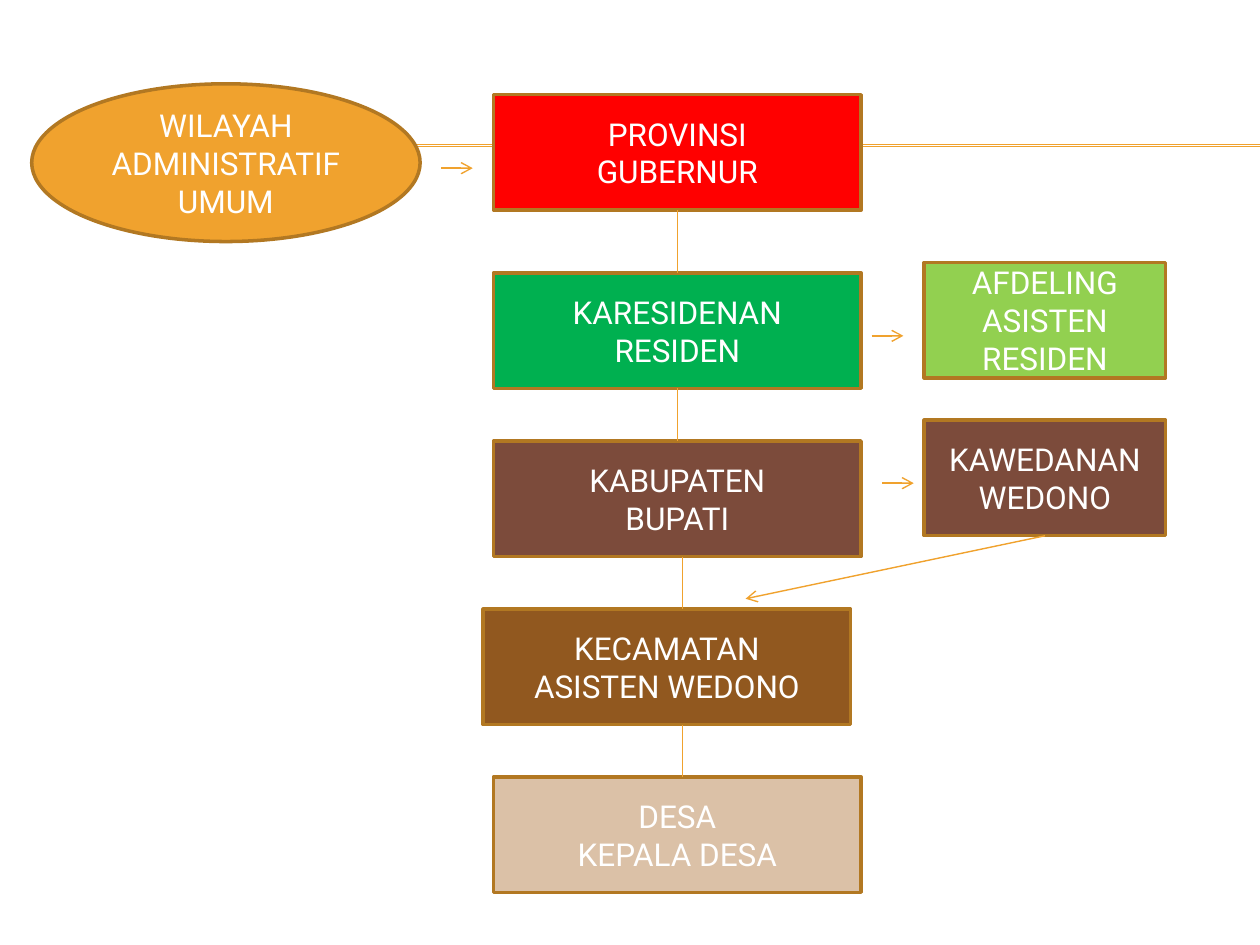
from pptx import Presentation
from pptx.dml.color import RGBColor
from pptx.enum.shapes import MSO_CONNECTOR, MSO_SHAPE
from pptx.enum.text import MSO_ANCHOR, PP_ALIGN
from pptx.oxml.ns import qn
from pptx.util import Cm, Pt
from lxml.etree import SubElement

WHITE = RGBColor(0xFF, 0xFF, 0xFF)
ORANGE = RGBColor(0xF0, 0xA2, 0x2E)
EDGE = RGBColor(0xB2, 0x78, 0x22)
RED = RGBColor(0xFF, 0x00, 0x00)
GREEN = RGBColor(0x00, 0xB0, 0x50)
LIME = RGBColor(0x92, 0xD0, 0x50)
BROWN = RGBColor(0x7C, 0x4B, 0x3B)
OCHRE = RGBColor(0x91, 0x58, 0x1F)
SAND = RGBColor(0xDB, 0xC1, 0xA7)

BOX_H = 2.33
MAIN_W, SIDE_W = 7.41, 4.87
MAIN_X, SIDE_X = 9.95, 18.63
STEM_X = 13.76


def add_node(slide, kind, text, fill, x, y, w, h=BOX_H):
    node = slide.shapes.add_shape(kind, Cm(x), Cm(y), Cm(w), Cm(h))
    node.shadow.inherit = False
    node.fill.solid()
    node.fill.fore_color.rgb = fill
    node.line.color.rgb = EDGE
    node.line.width = Pt(2)
    frame = node.text_frame
    frame.word_wrap = True
    frame.vertical_anchor = MSO_ANCHOR.MIDDLE
    frame.text = text
    for para in frame.paragraphs:
        para.alignment = PP_ALIGN.CENTER
        for run in para.runs:
            run.font.name = "Roboto"
            run.font.size = Pt(18)
            run.font.color.rgb = WHITE
    return node


def add_line(slide, x1, y1, x2, y2, arrow=False, width=0.79):
    line = slide.shapes.add_connector(
        MSO_CONNECTOR.STRAIGHT, Cm(x1), Cm(y1), Cm(x2), Cm(y2))
    line.line.color.rgb = ORANGE
    line.line.width = Pt(width)
    if arrow:
        SubElement(line.line._get_or_add_ln(), qn("a:tailEnd"), type="arrow")
    SubElement(line._element.spPr, qn("a:effectLst"))
    return line


def join(slide, upper, lower):
    """Link the bottom of one box to the top of the next."""
    line = add_line(slide, 0, 0, 1, 1)
    line.begin_connect(upper, 2)
    line.end_connect(lower, 0)


def main():
    prs = Presentation()
    prs.slide_width, prs.slide_height = Cm(25.4), Cm(19.05)
    slide = prs.slides.add_slide(prs.slide_layouts[6])

    for y in (2.92, 2.95):
        add_line(slide, 1.42, y, 25.4, y, width=0.75)

    add_node(slide, MSO_SHAPE.OVAL, "WILAYAH ADMINISTRATIF UMUM",
             ORANGE, 0.64, 1.69, 7.83, 3.18)
    boxes = [
        ("PROVINSI\nGUBERNUR", RED, MAIN_X, 1.91, MAIN_W),
        ("KARESIDENAN\nRESIDEN", GREEN, MAIN_X, 5.5, MAIN_W),
        ("KABUPATEN\nBUPATI", BROWN, MAIN_X, 8.89, MAIN_W),
        ("KECAMATAN\nASISTEN WEDONO", OCHRE, 9.74, 12.28, MAIN_W),
        ("DESA\nKEPALA DESA", SAND, MAIN_X, 15.66, MAIN_W),
        ("AFDELING\nASISTEN RESIDEN", LIME, SIDE_X, 5.29, SIDE_W),
        ("KAWEDANAN\nWEDONO", BROWN, SIDE_X, 8.47, SIDE_W),
    ]
    nodes = [add_node(slide, MSO_SHAPE.RECTANGLE, *box) for box in boxes]
    prov, resid, regency = nodes[:3]
    wedana = nodes[-1]

    join(slide, prov, resid)
    join(slide, resid, regency)
    for top, bottom in ((11.22, 12.28), (14.61, 15.66)):
        add_line(slide, STEM_X, top, STEM_X, bottom)

    for x, y in ((8.89, 3.39), (17.57, 6.77), (17.78, 9.74)):
        add_line(slide, x, y, x + 0.64, y, arrow=True)
    slant = add_line(slide, 21.06, 10.8, 15.03, 12.07, arrow=True)
    slant.begin_connect(wedana, 2)

    prs.save("out.pptx")


if __name__ == "__main__":
    main()
